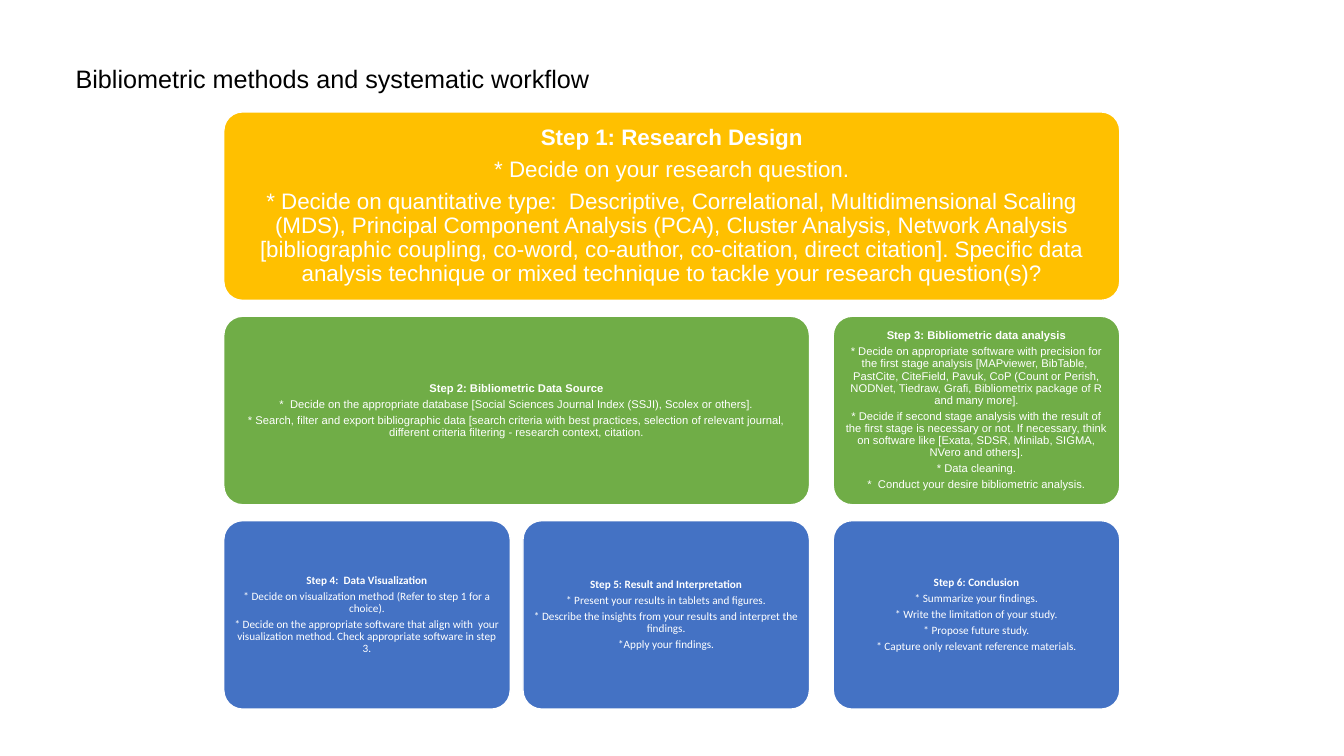
from pptx import Presentation
from pptx.dml.color import RGBColor as RGB
from pptx.enum.shapes import MSO_SHAPE as Shape
from pptx.enum.text import MSO_ANCHOR as Anchor, MSO_AUTO_SIZE as Auto, PP_ALIGN as Align
from pptx.util import Cm, Pt

GOLD = RGB(0xFF, 0xC0, 0x00)
GREEN = RGB(0x70, 0xAD, 0x47)
BLUE = RGB(0x44, 0x72, 0xC4)
WHITE = RGB(0xFF, 0xFF, 0xFF)
BLACK = RGB(0x00, 0x00, 0x00)

LEFTS = (5.64, 13.18, 21)
WIDTH = 7.22
TOP, HEIGHT, PITCH = 2.82, 4.75, 5.15

STEPS = [
    (0, 0, 2, GOLD, "Arial", 16, [
        "Step 1: Research Design",
        "* Decide on your research question.",
        "* Decide on quantitative type:  Descriptive, Correlational, Multidimensional "
        "Scaling (MDS), Principal Component Analysis (PCA), Cluster Analysis, Network "
        "Analysis [bibliographic coupling, co-word, co-author, co-citation, direct "
        "citation]. Specific data analysis technique or mixed technique to tackle your "
        "research question(s)?",
    ]),
    (1, 0, 1, GREEN, "Arial", 8, [
        "Step 2: Bibliometric Data Source",
        "*  Decide on the appropriate database [Social Sciences Journal Index (SSJI), "
        "Scolex or others].",
        "* Search, filter and export bibliographic data [search criteria with best "
        "practices, selection of relevant journal, different criteria filtering - "
        "research context, citation.",
    ]),
    (1, 2, 2, GREEN, "Arial", 8, [
        "Step 3: Bibliometric data analysis",
        "* Decide on appropriate software with precision for the first stage analysis "
        "[MAPviewer, BibTable,  PastCite, CiteField, Pavuk, CoP (Count or Perish, "
        "NODNet, Tiedraw, Grafi, Bibliometrix package of R and many more].",
        "* Decide if second stage analysis with the result of the first stage is "
        "necessary or not. If necessary, think on software like [Exata, SDSR, Minilab, "
        "SIGMA, NVero and others].",
        "* Data cleaning.",
        "*  Conduct your desire bibliometric analysis.",
    ]),
    (2, 0, 0, BLUE, "Calibri", 8, [
        "Step 4:  Data Visualization",
        "* Decide on visualization method (Refer to step 1 for a choice).",
        "* Decide on the appropriate software that align with  your visualization "
        "method. Check appropriate software in step 3.",
    ]),
    (2, 1, 1, BLUE, "Calibri", 8, [
        "Step 5: Result and Interpretation",
        "* Present your results in tablets and figures.",
        "* Describe the insights from your results and interpret the findings.",
        "*Apply your findings.",
    ]),
    (2, 2, 2, BLUE, "Calibri", 8, [
        "Step 6: Conclusion",
        "* Summarize your findings.",
        "* Write the limitation of your study.",
        "* Propose future study.",
        "* Capture only relevant reference materials.",
    ]),
]


def style(para, face, size, color, bold=False):
    font = para.font
    font.name, font.size, font.bold = face, Pt(size), bold
    font.color.rgb = color


def add_title(slide, left, top, width, height):
    title = slide.shapes.title
    title.left, title.top = Cm(left), Cm(top)
    title.width, title.height = Cm(width), Cm(height)
    frame = title.text_frame
    frame.text = "Bibliometric methods and systematic workflow"
    frame.word_wrap = False
    frame.auto_size = Auto.NONE
    frame.vertical_anchor = Anchor.TOP
    para = frame.paragraphs[0]
    para.alignment = Align.LEFT
    para.line_spacing = 1.15
    para.space_before = Pt(0)
    style(para, "Arial", 18, BLACK)


def add_step(slide, left, top, width, height, fill, face, size, lines):
    card = slide.shapes.add_shape(
        Shape.ROUNDED_RECTANGLE, Cm(left), Cm(top), Cm(width), Cm(height))
    card.adjustments[0] = 0.1
    card.shadow.inherit = False
    card.fill.solid()
    card.fill.fore_color.rgb = fill
    card.line.color.rgb = WHITE
    card.line.width = Pt(1)
    frame = card.text_frame
    frame.word_wrap = True
    frame.vertical_anchor = Anchor.MIDDLE
    inset = Cm(size / 94)
    frame.margin_left = frame.margin_right = inset
    frame.margin_top = frame.margin_bottom = inset
    frame.text = "\n".join(lines)
    for i, para in enumerate(frame.paragraphs):
        para.alignment = Align.CENTER
        para.line_spacing = 0.9
        para.space_after = Pt(0.35 * size)
        style(para, face, size, WHITE, i == 0)


def main():
    deck = Presentation()
    deck.slide_width, deck.slide_height = Cm(33.87), Cm(19.05)
    slide = deck.slides.add_slide(deck.slide_layouts[5])
    add_title(slide, 1.65, 1.35, 13.6, 1.1)
    for row, first, last, *look in STEPS:
        left = LEFTS[first]
        width = LEFTS[last] + WIDTH - left
        add_step(slide, left, TOP + row * PITCH, width, HEIGHT, *look)
    deck.save("out.pptx")


if __name__ == "__main__":
    main()
